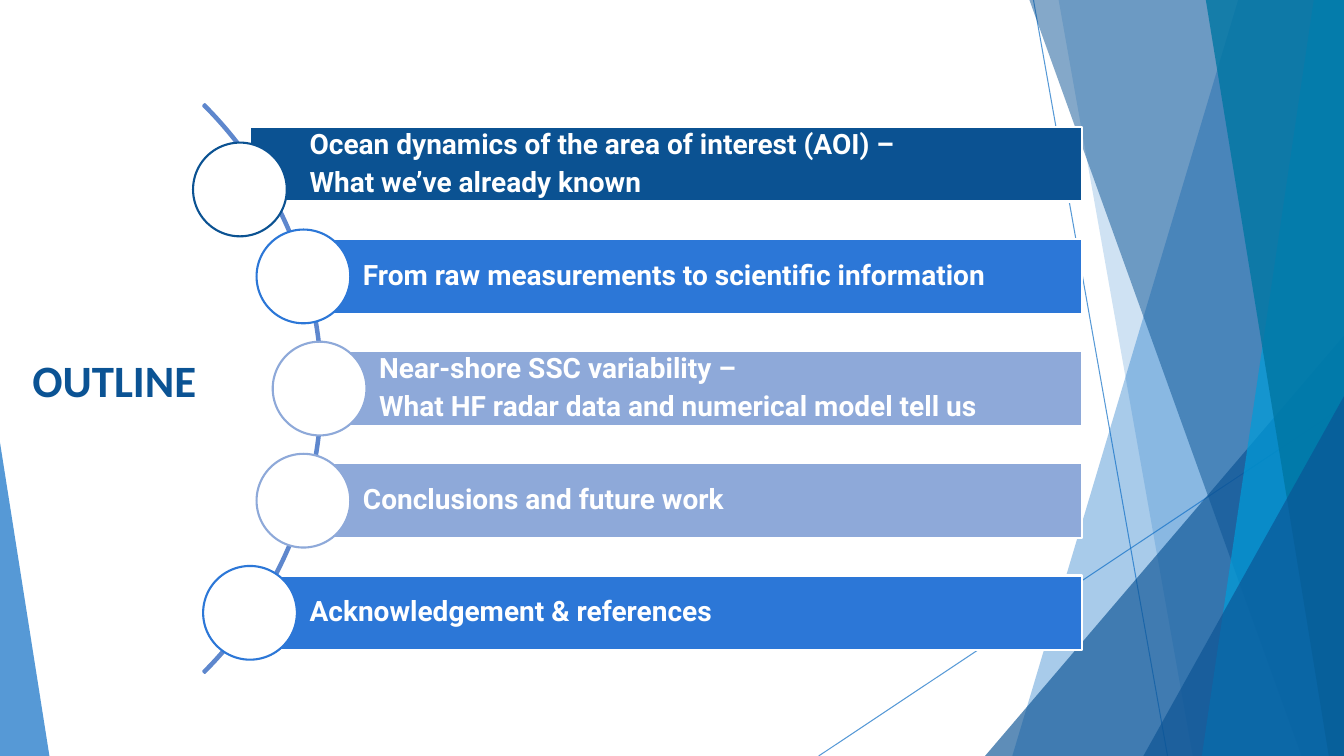
from lxml.etree import SubElement
from pptx import Presentation
from pptx.dml.color import RGBColor
from pptx.enum.shapes import MSO_CONNECTOR as Connector, MSO_SHAPE as Shape
from pptx.enum.text import MSO_ANCHOR as Anchor, PP_ALIGN as Align
from pptx.oxml.ns import qn
from pptx.util import Inches, Pt

WIDTH, HEIGHT = 13.33, 7.5
COLORS = {
    "sky": "0F6FC6", "navy": "0B5394", "cyan": "009DD9", "teal": "0076A3",
    "deep": "0B5292", "bright": "2C77D7", "pale": "8EA9D9",
    "arc": "5E87CD", "white": "FFFFFF",
}
RAYS = [((10.25, 0), (11.58, HEIGHT)), ((WIDTH, 4.03), (8.12, HEIGHT))]
FACETS = [
    ("band", 12.28, 10.04, "sky", 36),
    ("band", 10.5, 11.83, "sky", 20),
    ("corner", 3.33, 9.77, "navy", 66),
    ("band", 10.21, 12.91, "navy", 50),
    ("band", 13.03, 11.92, "cyan", 70),
    ("band", 11.96, 13.18, "teal", 80),
    ("corner", 3.93, 11.34, "navy", 66),
]
TOPICS = [
    ("Ocean dynamics of the area of interest (AOI) –\nWhat we’ve already known", 0, "deep", (-0.1, 0.25)),
    ("From raw measurements to scientific information", 0.53, "bright", (0, 0)),
    ("Near-shore SSC variability –\nWhat HF radar data and numerical model tell us", 0.69, "pale", (0, 0)),
    ("Conclusions and future work", 0.53, "pale", (0, 0)),
    ("Acknowledgement & references", 0, "bright", (0, 0)),
]


def rgb(name):
    """Return the named palette colour."""
    return RGBColor.from_string(COLORS[name])


def set_opacity(part, percent):
    """Give every explicit colour of a part the stated opacity."""
    for color in part._element.xpath(".//a:srgbClr"):
        SubElement(color, qn("a:alpha"), val=str(percent * 1000))


def paint(part, fill=None, line=None, opacity=None):
    """Set the fill, outline and opacity of a shape and drop its shadow."""
    part.shadow.inherit = False
    if fill:
        part.fill.solid()
        part.fill.fore_color.rgb = rgb(fill)
    else:
        part.fill.background()
    if line:
        part.line.color.rgb = rgb(line)
        part.line.width = Pt(1.5)
    else:
        part.line.fill.background()
    if opacity:
        set_opacity(part, opacity)


def add_preset(slide, preset, left, top, width, height):
    """Add a preset shape measured in inches."""
    return slide.shapes.add_shape(preset, *map(Inches, (left, top, width, height)))


def draw_backdrop(slide):
    """Draw the thin rays and the translucent facets at the slide edges."""
    for start, end in RAYS:
        ray = slide.shapes.add_connector(Connector.STRAIGHT, *map(Inches, start + end))
        ray.line.color.rgb = rgb("sky")
        ray.line.width = Pt(0.75)
        SubElement(ray._element.spPr, qn("a:effectLst"))
        set_opacity(ray, 70)
    for kind, upper, lower, color, opacity in FACETS:
        if kind == "band":
            outline = slide.shapes.build_freeform(Inches(upper), 0)
            corners = [(WIDTH, 0), (WIDTH, HEIGHT), (lower, HEIGHT)]
            outline.add_line_segments([(Inches(x), Inches(y)) for x, y in corners])
            facet = outline.convert_to_shape()
        else:
            facet = add_preset(slide, Shape.ISOSCELES_TRIANGLE, lower, upper, WIDTH - lower, HEIGHT - upper)
            facet.adjustments[0] = 1
        paint(facet, color, opacity=opacity)
    left_facet = add_preset(slide, Shape.ISOSCELES_TRIANGLE, 0, 4.39, 0.49, HEIGHT - 4.39)
    left_facet.adjustments[0] = 0
    paint(left_facet, "sky", opacity=70)


def format_runs(paragraph, font, size, color):
    """Format all runs of a paragraph as bold text."""
    for run in paragraph.runs:
        run.font.name, run.font.size, run.font.bold = font, Pt(size), True
        run.font.color.rgb = rgb(color)


def write_heading(slide, left, top, width, height):
    """Place and format the slide title in its box."""
    heading = slide.shapes.title
    heading.left, heading.top, heading.width, heading.height = map(Inches, (left, top, width, height))
    heading.text_frame.text = "OUTLINE"
    heading.text_frame.vertical_anchor = Anchor.TOP
    heading.text_frame.paragraphs[0].alignment = Align.LEFT
    format_runs(heading.text_frame.paragraphs[0], "Calibri", 32, "navy")


def write_topic(bar, wording):
    """Write the wording of one topic inside its bar."""
    frame = bar.text_frame
    frame.text = wording
    frame.word_wrap = True
    frame.vertical_anchor = Anchor.MIDDLE
    frame.margin_left = Inches(0.59)
    frame.margin_top = frame.margin_right = frame.margin_bottom = Inches(0.06)
    for paragraph in frame.paragraphs:
        paragraph.alignment = Align.LEFT
        paragraph.line_spacing = 0.9
        paragraph.space_after = Pt(6)
        format_runs(paragraph, "Roboto", 20, "white")


def draw_topics(slide, left, top, width, height):
    """Draw the arc and evenly spaced topic bars with their circles."""
    bar_height, circle, arc_size = 0.74, 0.93, 7.98
    pitch = (height - bar_height) / (len(TOPICS) - 1)
    arc = add_preset(slide, Shape.BLOCK_ARC, left + 0.72 - arc_size,
                     top + (height - arc_size) / 2, arc_size, arc_size)
    for index, angle in enumerate((189, 27, 0.003)):
        arc.adjustments[index] = angle
    paint(arc, line="arc")
    for row, (wording, indent, color, (shift_x, shift_y)) in enumerate(TOPICS):
        bar_left, bar_top = left + indent, top + row * pitch
        bar = add_preset(slide, Shape.RECTANGLE, bar_left, bar_top, width - indent, bar_height)
        paint(bar, color, "white")
        write_topic(bar, wording)
        marker = add_preset(slide, Shape.OVAL, bar_left - circle / 2 + shift_x,
                            bar_top + (bar_height - circle) / 2 + shift_y, circle, circle)
        paint(marker, "white", color)


def main():
    """Build and save the outline slide."""
    deck = Presentation()
    deck.slide_width, deck.slide_height = Inches(WIDTH), Inches(HEIGHT)
    slide = deck.slides.add_slide(deck.slide_layouts[5])
    draw_backdrop(slide)
    write_heading(slide, 0.22, 3.45, 2.53, 1.45)
    draw_topics(slide, 2.48, 1.26, 8.25, 5.19)
    deck.save("out.pptx")


if __name__ == "__main__":
    main()
